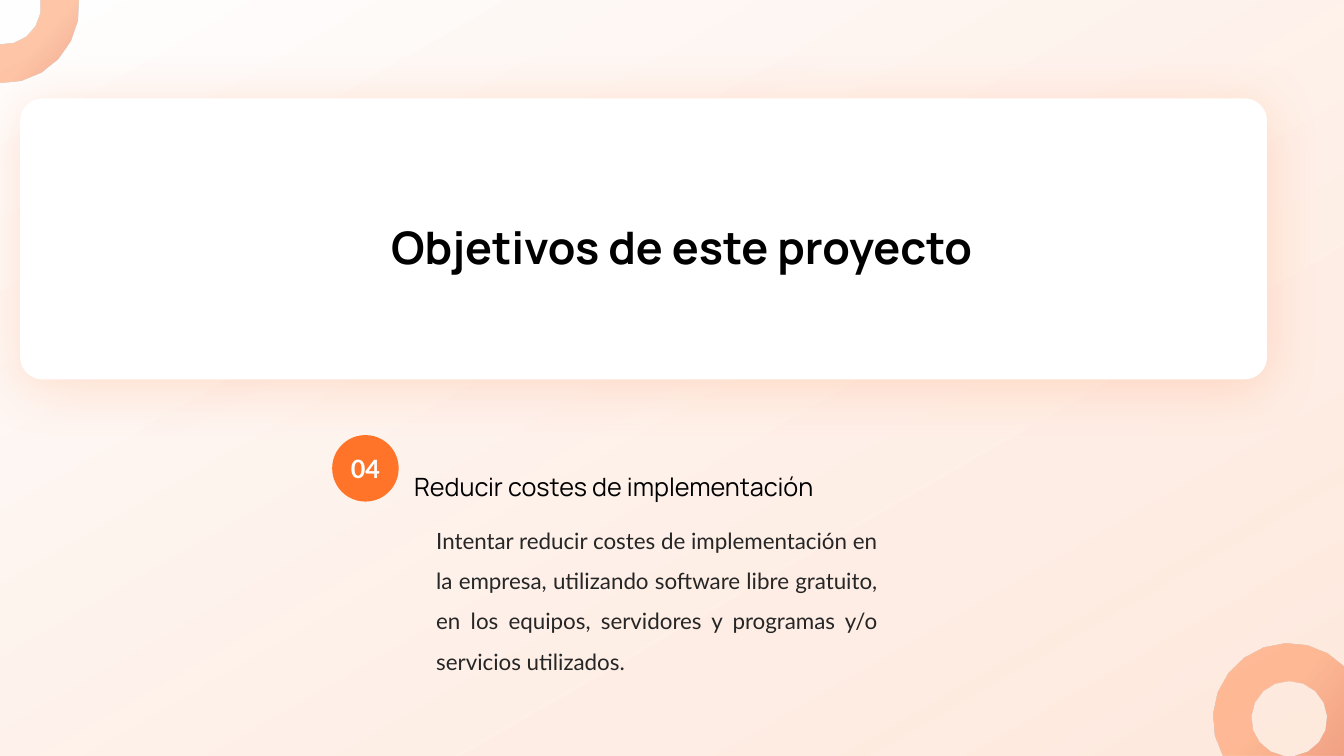
import dataclasses
import math

import lxml.etree
import pptx
import pptx.dml.color
import pptx.enum.shapes
import pptx.enum.text
import pptx.oxml.ns
import pptx.util

COLS, ROWS = 160, 90
UNIT = pptx.util.Inches(7.5) / ROWS
SHAPES = pptx.enum.shapes.MSO_SHAPE
ALIGN = pptx.enum.text.PP_ALIGN
ANCHOR = pptx.enum.text.MSO_ANCHOR
qn = pptx.oxml.ns.qn


@dataclasses.dataclass(frozen=True)
class Theme:
    accent: str = "FF7429"
    deep: str = "DE3500"
    tint: str = "FFE3D4"
    white: str = "FFFFFF"
    black: str = "000000"
    gray: str = "262626"
    display: str = "Manrope"
    text: str = "Lato"
    title_size: int = 32
    heading_size: int = 18
    body_size: int = 16


THEME = Theme()


def rgb(color):
    return pptx.dml.color.RGBColor.from_string(color)


def emu(cells):
    return round(cells * UNIT)


def assign(obj, values):
    for name, value in values.items():
        setattr(obj, name, value)


def place(sp, box):
    assign(sp, dict(zip(("left", "top", "width", "height"), map(emu, box))))


def inside(box, dx, dy, w, h):
    return box[0] + dx, box[1] + dy, w, h


def plain(sp):
    sp.shadow.inherit = False
    sp.line.fill.background()


def add_shape(s, kind, box, color):
    sp = s.shapes.add_shape(kind, *map(emu, box))
    plain(sp)
    sp.fill.solid()
    sp.fill.fore_color.rgb = rgb(color)
    return sp


def fill_gradient(sp, stops, angle):
    sp.fill.gradient()
    sp.fill.gradient_angle = 360 - angle
    for stop, (position, color, opacity) in zip(sp.fill.gradient_stops, stops):
        stop.position = position
        stop.color.rgb = rgb(color)
    for clr, (position, color, opacity) in zip(sp.element.iter(qn("a:srgbClr")), stops):
        lxml.etree.SubElement(clr, qn("a:alpha"), val=str(opacity * 1000))


def write(sp, text, font, size, color, bold=False, frame=None, paragraph=None):
    tf = sp.text_frame
    margins = dict.fromkeys(
        ("margin_left", "margin_top", "margin_right", "margin_bottom"), 0)
    assign(tf, {"word_wrap": True, "auto_size": pptx.enum.text.MSO_AUTO_SIZE.NONE,
                **margins, **(frame or {})})
    p = tf.paragraphs[0]
    assign(p, {"space_before": pptx.util.Pt(0), **(paragraph or {})})
    r = p.add_run()
    r.text = text
    assign(r.font, {"name": font, "size": pptx.util.Pt(size), "bold": bold})
    r.font.color.rgb = rgb(color)
    sp.element.getparent().append(sp.element)


def remove_bullet(p):
    pPr = p._p.get_or_add_pPr()
    pPr.set("marL", "0")
    pPr.set("indent", "0")
    lxml.etree.SubElement(pPr, qn("a:buNone"))


def add_glow(sp):
    effects = next(sp.element.iter(qn("a:effectLst")))
    shadow = lxml.etree.SubElement(
        effects, qn("a:outerShdw"), blurRad=str(pptx.util.Pt(40)),
        dist=str(pptx.util.Pt(6)), dir=str(90 * 60000), rotWithShape="0")
    clr = lxml.etree.SubElement(shadow, qn("a:srgbClr"), val=THEME.accent)
    lxml.etree.SubElement(clr, qn("a:alpha"), val="20000")


def arc(cx, cy, radius, start, end, step):
    count = math.ceil(abs(end - start) / step)
    angles = [math.radians(start + (end - start) * i / count) for i in range(count + 1)]
    return [(min(max(cx + radius * math.cos(a), 0), COLS),
             min(max(cy + radius * math.sin(a), 0), ROWS)) for a in angles]


def add_ring(s, center, rim, hole, corners=()):
    outline = [*arc(*center, 9, *rim, 17), *corners, *arc(*center, 4.48, *hole, 22)]
    points = [(emu(x), emu(y)) for x, y in outline]
    builder = s.shapes.build_freeform(*points[0])
    builder.add_line_segments(points[1:], close=True)
    sp = builder.convert_to_shape()
    plain(sp)
    fill_gradient(sp, [(0.5, THEME.accent, 40), (1, THEME.deep, 40)], 40)


def add_backdrop(s, box):
    left, top, width, height = box
    right, bottom = left + width, top + height
    sp = add_shape(s, SHAPES.RECTANGLE, box, THEME.white)
    fill_gradient(sp, [(0, THEME.tint, 75), (1, THEME.white, 100)], 240)
    add_ring(s, (left + 0.36, top + 0.84), (-5.4, 92.3), (94.6, -10.8))
    add_ring(s, (right - 6.58, bottom - 4.44), (150.4, 317), (82, -262),
             [(right, bottom)])


def add_title_card(s, box, text):
    card = add_shape(s, SHAPES.ROUNDED_RECTANGLE, box, THEME.white)
    card.adjustments[0] = 0.08
    add_glow(card)
    title = s.shapes.title
    place(title, inside(box, 9.1, 0, box[2] - 9.1, box[3] - 0.2))
    write(title, text, THEME.display, THEME.title_size, THEME.black, bold=True,
          frame={"vertical_anchor": ANCHOR.MIDDLE},
          paragraph={"alignment": ALIGN.CENTER, "line_spacing": 1.3})


def add_objective(s, box, number, heading, text):
    badge = add_shape(s, SHAPES.OVAL, inside(box, 0, 1.4, 7.92, 7.92), THEME.accent)
    write(badge, number, THEME.text, THEME.heading_size, THEME.white, bold=True,
          frame={"vertical_anchor": ANCHOR.MIDDLE, "word_wrap": False},
          paragraph={"alignment": ALIGN.CENTER})
    body = s.placeholders[1]
    place(body, inside(box, 12.38, 10.74, 52.56, box[3] - 10.74))
    write(body, text, THEME.text, THEME.body_size, THEME.gray,
          frame={"vertical_anchor": ANCHOR.TOP},
          paragraph={"alignment": ALIGN.JUSTIFY, "line_spacing": 1.5})
    remove_bullet(body.text_frame.paragraphs[0])
    label = s.shapes.add_textbox(*map(emu, inside(box, 9.74, 0, 54.6, 9.36)))
    write(label, heading, THEME.display, THEME.heading_size, THEME.black,
          frame={"vertical_anchor": ANCHOR.BOTTOM},
          paragraph={"alignment": ALIGN.LEFT})


def main():
    prs = pptx.Presentation()
    assign(prs, {"slide_width": emu(COLS), "slide_height": emu(ROWS)})
    s = prs.slides.add_slide(prs.slide_layouts[1])
    add_backdrop(s, (0, 0, COLS, ROWS))
    add_title_card(s, (2.4, 11.72, 148.44, 33.44), "Objetivos de este proyecto")
    add_objective(
        s, (39.55, 50.4, 64.94, 32.34), "04", "Reducir costes de implementación",
        "Intentar reducir costes de implementación en la empresa, utilizando software "
        "libre gratuito, en los equipos, servidores y programas y/o servicios utilizados.")
    prs.save("out.pptx")


if __name__ == "__main__":
    main()
